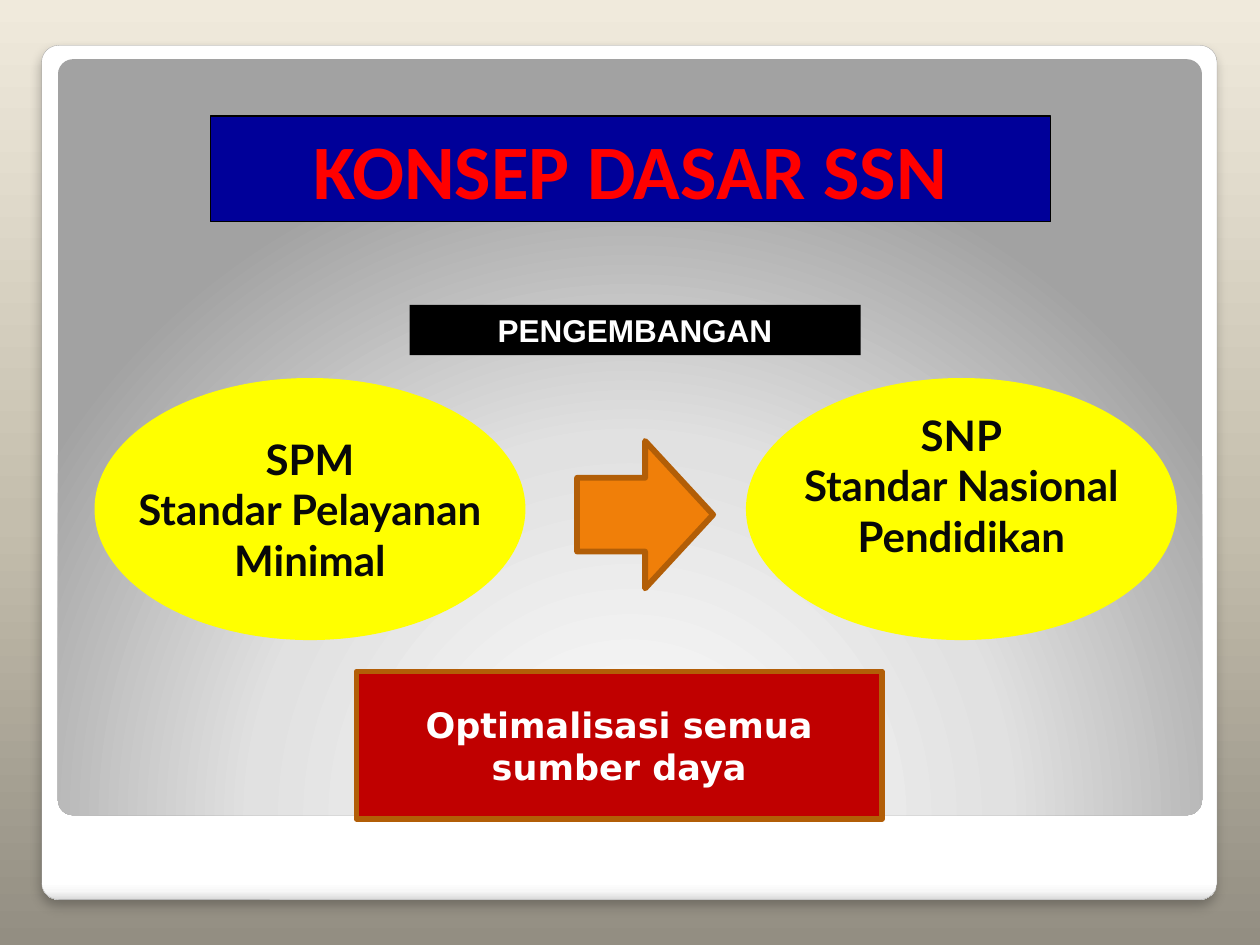
from lxml import etree
from pptx import Presentation
from pptx.dml.color import RGBColor
from pptx.enum.shapes import MSO_SHAPE as Preset
from pptx.enum.text import MSO_ANCHOR as Anchor, MSO_AUTO_SIZE as AutoSize, PP_ALIGN as Align
from pptx.oxml import parse_xml
from pptx.oxml.ns import qn
from pptx.util import Inches, Pt

DRAWING_NS = "http://schemas.openxmlformats.org/drawingml/2006/main"
VERTICAL = '<a:lin ang="{}" scaled="0"/>'
GLOW = '<a:path path="circle"><a:fillToRect l="50000" t="175000" r="50000" b="-75000"/></a:path>'


def color(hex_code):
    return RGBColor.from_string(hex_code)


def gradient(fill, holder, stops, direction):
    fill.solid()
    fill.fore_color.rgb = color("FFFFFF")
    stop_xml = "".join(
        f'<a:gs pos="{percent * 1000}"><a:srgbClr val="{shade}"/></a:gs>'
        for percent, shade in stops
    )
    solid = next(holder.iter(qn("a:solidFill")))
    solid.getparent().replace(solid, parse_xml(
        f'<a:gradFill xmlns:a="{DRAWING_NS}" rotWithShape="1">'
        f"<a:gsLst>{stop_xml}</a:gsLst>{direction}</a:gradFill>"
    ))


def soft_shadow(shape):
    effects = shape._element.spPr.find(qn("a:effectLst"))
    shadow = etree.SubElement(effects, qn("a:outerShdw"), blurRad=str(Pt(6)),
                              dist=str(Pt(4)), dir="5400000", algn="t", rotWithShape="0")
    tint = etree.SubElement(shadow, qn("a:srgbClr"), val="000000")
    etree.SubElement(tint, qn("a:alpha"), val="25000")


def paint(shape, fill, line=None, width=0):
    shape.fill.solid()
    shape.fill.fore_color.rgb = color(fill)
    outline(shape, line, width)


def outline(shape, line, width):
    if line:
        shape.line.color.rgb = color(line)
        shape.line.width = Pt(width)
    else:
        shape.line.fill.background()


def add_preset(slide, preset, box):
    shape = slide.shapes.add_shape(preset, *map(Inches, box))
    shape.shadow.inherit = False
    return shape


def write(shape, text, font, size, ink, wrap=True):
    frame = shape.text_frame
    frame.text = text
    frame.word_wrap = wrap
    frame.auto_size = AutoSize.NONE
    frame.vertical_anchor = Anchor.MIDDLE
    for paragraph in frame.paragraphs:
        paragraph.alignment = Align.CENTER
        for run in paragraph.runs:
            run.font.name = font
            run.font.size = Pt(size)
            run.font.bold = True
            run.font.color.rgb = color(ink)


def backdrop(slide, box):
    background = slide.background
    gradient(background.fill, slide._element,
             [(0, "938E82"), (45, "C4BEAD"), (100, "F0EADC")], VERTICAL.format(16200000))

    left, top, width, height = box
    card = add_preset(slide, Preset.ROUNDED_RECTANGLE, box)
    gradient(card.fill, card._element,
             [(0, "FFFFFF"), (98, "FFFFFF"), (99, "F7F7F7"), (100, "DADADA")],
             VERTICAL.format(5400000))
    outline(card, "A4A4A4", 0.16)
    soft_shadow(card)

    panel = add_preset(slide, Preset.ROUNDED_RECTANGLE,
                       (left + 0.13, top + 0.11, width - 0.25, height - 0.78))
    gradient(panel.fill, panel._element,
             [(0, "FFFFFF"), (55, "E1E1E1"), (100, "A2A2A2")], GLOW)
    outline(panel, None, 0)
    for rounded in (card, panel):
        rounded.adjustments[0] = 0.02


def heading(slide, box):
    title = slide.shapes.title
    title.left, title.top, title.width, title.height = map(Inches, box)
    paint(title, "000099", "000000", 0.75)
    write(title, "KONSEP DASAR SSN", "Calibri", 44, "FF0000")
    slide.shapes._spTree.append(title._element)


def standard(slide, box, text, lift=0):
    oval = add_preset(slide, Preset.OVAL, box)
    paint(oval, "FFFF00")
    write(oval, text, "Lato", 24, "080808", wrap=False)
    oval.text_frame.margin_bottom = Inches(0.05 + lift)


def development(slide, box):
    left, top, width, height = box
    oval_width = 3.42
    standard(slide, (left, top, oval_width, height), "SPM\nStandar Pelayanan\nMinimal")
    standard(slide, (left + width - oval_width, top, oval_width, height),
             "SNP\nStandar Nasional\nPendidikan", lift=0.38)
    arrow = add_preset(slide, Preset.RIGHT_ARROW, (left + 3.83, top + 0.5, 1.08, 1.17))
    paint(arrow, "F07F09", "B25E07", 3.35)


def resources(slide, box):
    banner = add_preset(slide, Preset.RECTANGLE, box)
    paint(banner, "C00000", "B25E07", 3.35)
    write(banner, "Optimalisasi semua sumber daya", "DejaVu Sans", 20, "FFFFFF")


def caption(slide, box):
    label = add_preset(slide, Preset.RECTANGLE, box)
    paint(label, "000000")
    write(label, "PENGEMBANGAN", "Arial", 18, "FFFFFF")


def main():
    deck = Presentation()
    deck.slide_width, deck.slide_height = Inches(10), Inches(7.5)
    slide = deck.slides.add_slide(deck.slide_layouts[5])
    backdrop(slide, (0.33, 0.36, 9.33, 6.78))
    heading(slide, (1.67, 0.92, 6.67, 0.84))
    development(slide, (0.75, 3, 8.59, 2.08))
    resources(slide, (2.83, 5.33, 4.17, 1.17))
    caption(slide, (3.25, 2.42, 3.58, 0.4))
    deck.save("out.pptx")


if __name__ == "__main__":
    main()
